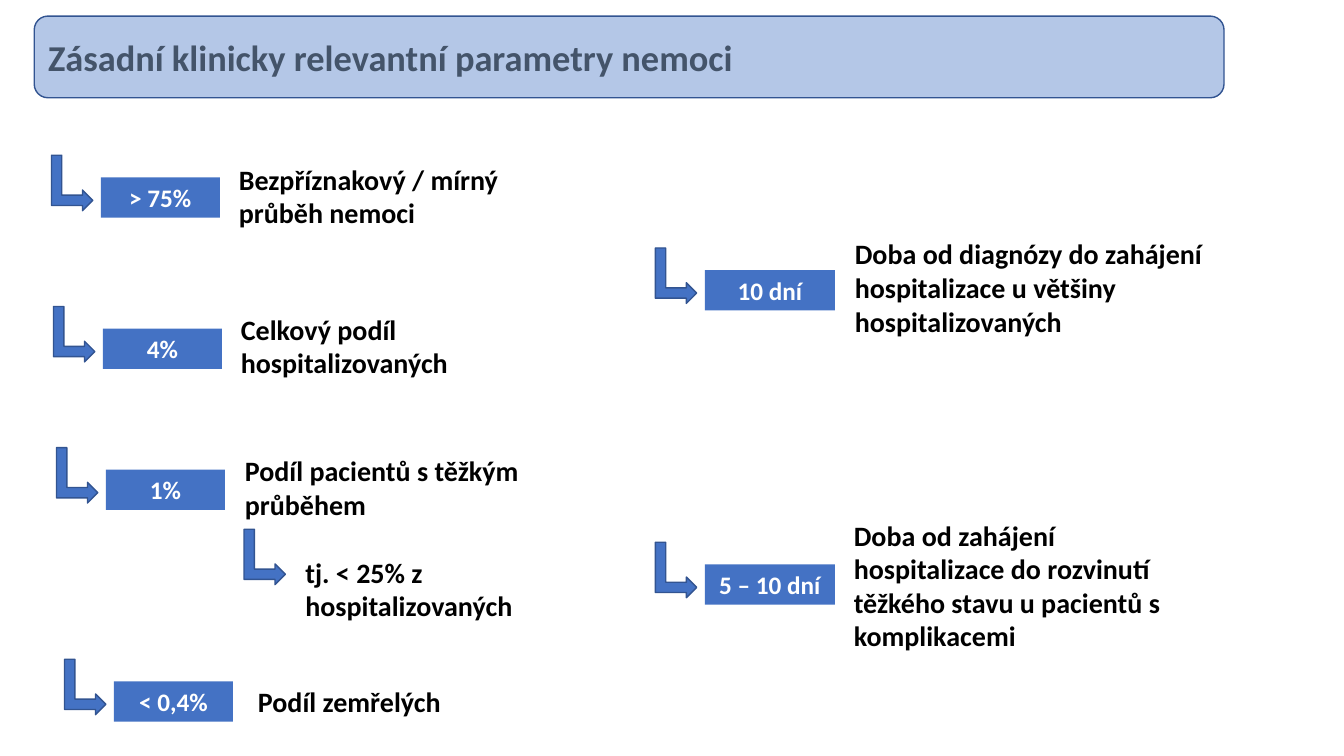
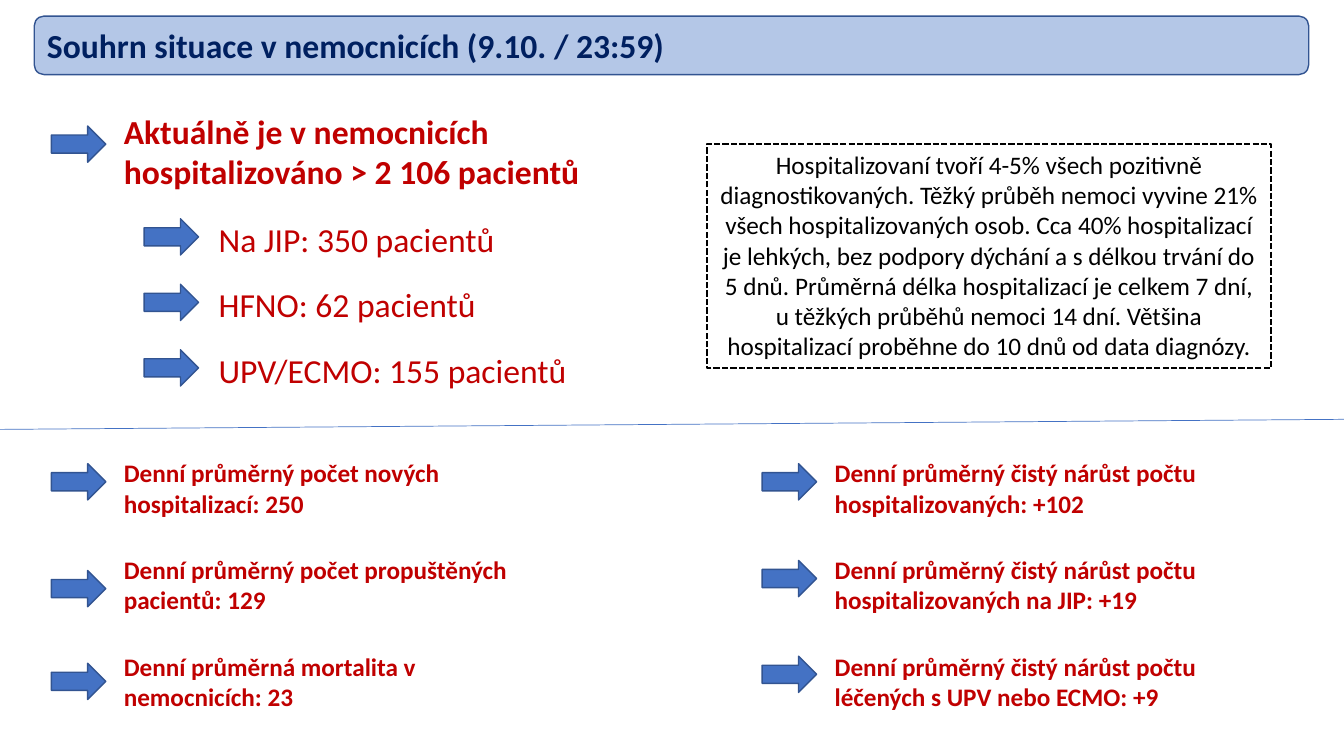
from dataclasses import dataclass

from lxml import etree
from pptx import Presentation
from pptx.dml.color import RGBColor
from pptx.enum.dml import MSO_LINE
from pptx.enum.shapes import MSO_CONNECTOR, MSO_SHAPE
from pptx.enum.text import MSO_ANCHOR, PP_ALIGN
from pptx.oxml.ns import qn
from pptx.util import Inches, Pt

BENT_ARROW = MSO_SHAPE.BENT_UP_ARROW
RIGHT_ARROW = MSO_SHAPE.RIGHT_ARROW
RECTANGLE = MSO_SHAPE.RECTANGLE
ROUNDED = MSO_SHAPE.ROUNDED_RECTANGLE
STRAIGHT = MSO_CONNECTOR.STRAIGHT
DASHED = MSO_LINE.SQUARE_DOT
LEFT, CENTER = PP_ALIGN.LEFT, PP_ALIGN.CENTER
TOP, MIDDLE = MSO_ANCHOR.TOP, MSO_ANCHOR.MIDDLE


@dataclass(frozen=True)
class Theme:
    font: str = "Calibri"
    accent: str = "4472C4"
    outline: str = "325491"
    band: str = "B4C7E7"
    slate: str = "44546A"
    navy: str = "002060"
    red: str = "C00000"
    black: str = "000000"
    white: str = "FFFFFF"
    title: int = 26
    heading: int = 24
    label: int = 20
    body: int = 18


THEME = Theme()
SLIDE_WIDTH, SLIDE_HEIGHT = 13.33, 7.5

DISEASE_TITLE = "Zásadní klinicky relevantní parametry nemoci"
# value, text, arrow left, arrow top, badge width, text left, text top, text width, text height
DISEASE_FACTS = [
    ("> 75%", "Bezpříznakový / mírný průběh nemoci", 0.44, 1.61, 1.18, (2.27, 1.56, 3.02, 0.77)),
    ("4%", "Celkový podíl hospitalizovaných", 0.46, 3.11, 1.18, (2.29, 3.05, 3.02, 0.77)),
    ("1%", "Podíl pacientů s těžkým průběhem", 0.49, 4.51, 1.18, (2.33, 4.45, 3.02, 0.77)),
    (None, "tj. < 25% z hospitalizovaných", 2.35, 5.32, 0, (2.93, 5.46, 3.02, 0.77)),
    ("< 0,4%", "Podíl zemřelých", 0.57, 6.61, 1.18, (2.46, 6.74, 3.02, 0.44)),
    ("10 dní", "Doba od diagnózy do zahájení hospitalizace u většiny hospitalizovaných",
     6.43, 2.53, 1.29, (8.38, 2.3, 3.67, 1.11)),
    ("5 – 10 dní", "Doba od zahájení hospitalizace do rozvinutí těžkého stavu u pacientů s komplikacemi",
     6.43, 5.45, 1.29, (8.37, 5.09, 3.48, 1.45)),
]

HOSPITAL_TITLE = "Souhrn situace v nemocnicích (9.10. / 23:59)"
HOSPITAL_TOTAL = "Aktuálně je v nemocnicích hospitalizováno > 2 106 pacientů"
CARE_LEVELS = ["Na JIP: 350 pacientů", "HFNO: 62 pacientů", "UPV/ECMO: 155 pacientů"]
DAILY_COLUMNS = [
    (0.51, [
        ("Denní průměrný počet nových hospitalizací: 250", 4.6),
        ("Denní průměrný počet propuštěných pacientů: 129", 5.66),
        ("Denní průměrná mortalita v nemocnicích: 23", 6.58),
    ]),
    (7.56, [
        ("Denní průměrný čistý nárůst počtu hospitalizovaných: +102", 4.6),
        ("Denní průměrný čistý nárůst počtu hospitalizovaných na JIP: +19", 5.56),
        ("Denní průměrný čistý nárůst počtu léčených s UPV nebo ECMO: +9", 6.51),
    ]),
]
HOSPITAL_NOTE = (
    "Hospitalizovaní tvoří 4-5% všech pozitivně diagnostikovaných. "
    "Těžký průběh nemoci vyvine 21% všech hospitalizovaných osob. "
    "Cca 40% hospitalizací je lehkých, bez podpory dýchání a s délkou trvání do 5 dnů. "
    "Průměrná délka hospitalizací je celkem 7 dní, u těžkých průběhů nemoci 14 dní. "
    "Většina hospitalizací proběhne do 10 dnů od data diagnózy."
)


def color(value):
    return RGBColor.from_string(value)


def write(shape, text, size, text_color, bold=True, align=LEFT, anchor=TOP):
    frame = shape.text_frame
    frame.word_wrap = True
    frame.vertical_anchor = anchor
    paragraph = frame.paragraphs[0]
    paragraph.text = text
    paragraph.alignment = align
    font = paragraph.font
    font.name, font.size, font.bold = THEME.font, Pt(size), bold
    font.color.rgb = color(text_color)


def add_text(slide, box, text, size, text_color, bold=True):
    write(slide.shapes.add_textbox(*map(Inches, box)), text, size, text_color, bold)


def add_shape(slide, kind, box, fill=None, line=None, line_width=1):
    shape = slide.shapes.add_shape(kind, *map(Inches, box))
    shape.shadow.inherit = False
    if fill:
        shape.fill.solid()
        shape.fill.fore_color.rgb = color(fill)
    else:
        shape.fill.background()
    if line:
        shape.line.color.rgb = color(line)
        shape.line.width = Pt(line_width)
    else:
        shape.line.fill.background()
    return shape


def add_title(slide, text, width, height, size, text_color):
    band = add_shape(slide, ROUNDED, (0.34, 0.16, width, height), THEME.band, THEME.outline)
    write(band, text, size, text_color, anchor=MIDDLE)


def add_bent_arrow(slide, left, top):
    arrow = add_shape(slide, BENT_ARROW, (left, top, 0.55, 0.41), THEME.accent, THEME.outline)
    arrow.rotation = 90


def add_right_arrow(slide, left, top):
    add_shape(slide, RIGHT_ARROW, (left, top, 0.54, 0.36), THEME.accent, THEME.outline)


def add_divider(slide, start, end):
    line = slide.shapes.add_connector(STRAIGHT, *map(Inches, start + end))
    line.line.color.rgb = color(THEME.accent)
    line.line.width = Pt(0.5)
    etree.SubElement(line._element.spPr, qn("a:effectLst"))


def build_disease_slide(slide):
    add_title(slide, DISEASE_TITLE, 11.8, 0.81, THEME.title, THEME.slate)
    for value, text, left, top, badge_width, text_box in DISEASE_FACTS:
        add_bent_arrow(slide, left, top)
        add_text(slide, text_box, text, THEME.label, THEME.black)
        if value:
            badge = add_shape(slide, RECTANGLE, (left + 0.56, top + 0.15, badge_width, 0.4), THEME.accent)
            write(badge, value, THEME.body, THEME.white, align=CENTER)


def build_hospital_slide(slide):
    add_title(slide, HOSPITAL_TITLE, 12.64, 0.58, THEME.heading, THEME.navy)
    add_right_arrow(slide, 0.51, 1.25)
    add_text(slide, (1.13, 1.05, 4.88, 0.91), HOSPITAL_TOTAL, THEME.heading, THEME.red)
    for row, text in enumerate(CARE_LEVELS):
        top = 2.17 + row * 0.65
        add_right_arrow(slide, 1.43, top)
        add_text(slide, (2.07, top - 0.05, 3.73, 0.5), text, THEME.heading, THEME.red, bold=False)
    for left, entries in DAILY_COLUMNS:
        for row, (text, arrow_top) in enumerate(entries):
            add_right_arrow(slide, left, arrow_top)
            add_text(slide, (left + 0.62, 4.49 + row * 0.96, 4.06, 0.71), text, THEME.body, THEME.red)
    add_divider(slide, (0, 4.26), (SLIDE_WIDTH, 4.16))
    note = add_shape(slide, RECTANGLE, (7.01, 1.43, 5.6, 2.22), line=THEME.black, line_width=1.5)
    note.line.dash_style = DASHED
    write(note, HOSPITAL_NOTE, THEME.body, THEME.black, bold=False, align=CENTER)


def main():
    presentation = Presentation()
    presentation.slide_width = Inches(SLIDE_WIDTH)
    presentation.slide_height = Inches(SLIDE_HEIGHT)
    blank = presentation.slide_layouts[6]
    for build in (build_disease_slide, build_hospital_slide):
        build(presentation.slides.add_slide(blank))
    presentation.save("out.pptx")


if __name__ == "__main__":
    main()
